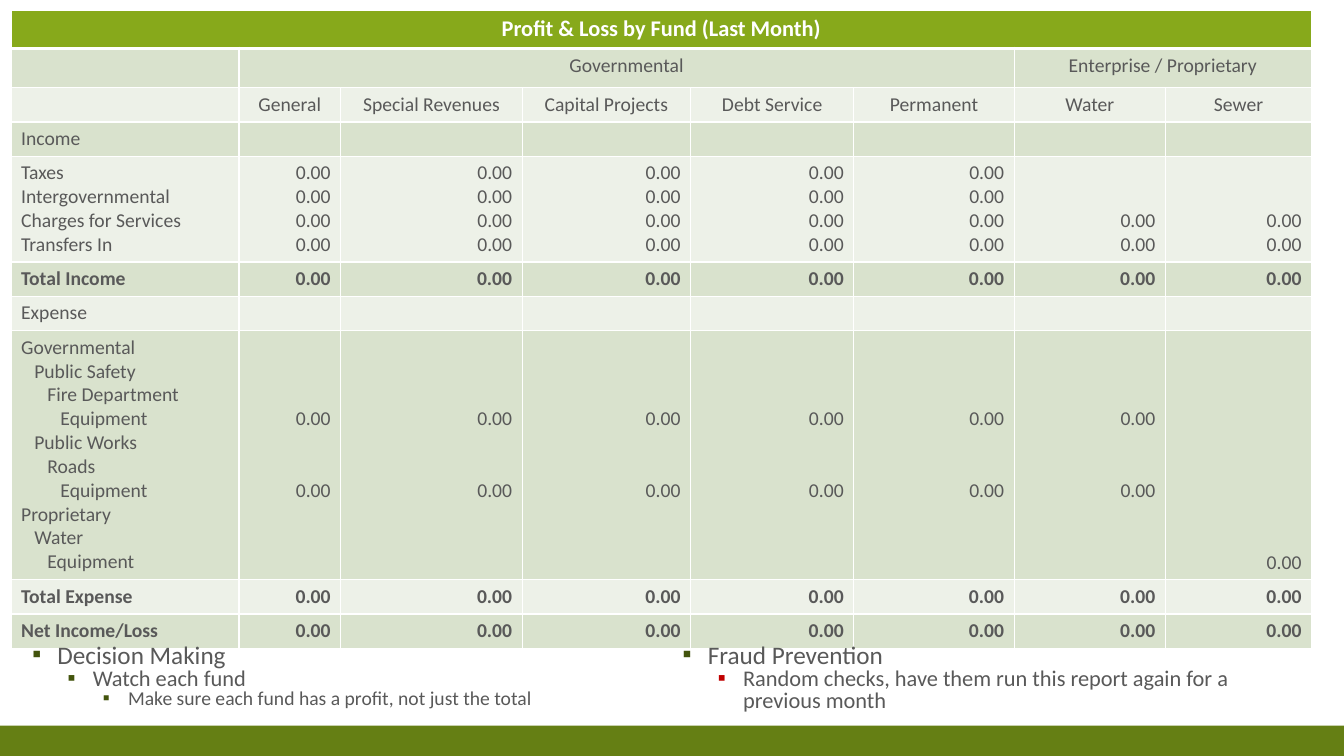
from lxml import etree
from pptx import Presentation
from pptx import util as u
from pptx.dml.color import RGBColor
from pptx.enum import shapes, text
from pptx.oxml.ns import qn

FONT = "Calibri"
GREY, WHITE, BAND, BULLET, ALERT = "595959", "FFFFFF", "657F14", "43540D", "C00000"
HEADER_FILL, ROW_FILLS = "87A91B", ("EDF1E8", "D9E2CD")
COLUMNS = [2.26, 1.01, 1.8, 1.67, 1.62, 1.59, 1.5, 1.45]
HEADER = "Profit & Loss by Fund (Last Month)"
GROUPS = [("Governmental", 1, 5), ("Enterprise / Proprietary", 6, 7)]
FUNDS = ["General", "Special Revenues", "Capital Projects", "Debt Service",
         "Permanent", "Water", "Sewer"]
TOP_HEIGHTS = [0.38, 0.39, 0.34]
AMOUNT = "0.00"
LINE = 17.09
STEP = 0.13

# (height, bold, [(label, level)], lines holding an amount for each fund)
ROWS = [
    (0.34, False, [("Income", 0)], [[]] * 7),
    (1.05, False,
     [("Taxes", 0), ("Intergovernmental", 0), ("Charges for Services", 0), ("Transfers In", 0)],
     [[0, 1, 2, 3]] * 5 + [[2, 3]] * 2),
    (0.34, True, [("Total Income", 0)], [[0]] * 7),
    (0.34, False, [("Expense", 0)], [[]] * 7),
    (2.46, False,
     [("Governmental", 0), ("Public Safety", 1), ("Fire Department", 2), ("Equipment", 3),
      ("Public Works", 1), ("Roads", 2), ("Equipment", 3),
      ("Proprietary", 0), ("Water", 1), ("Equipment", 2)],
     [[3, 6]] * 6 + [[9]]),
    (0.34, True, [("Total Expense", 0)], [[0]] * 7),
    (0.34, True, [("Net Income/Loss", 0)], [[0]] * 7),
]
NOTES = [
    (0.17, 6.5, [("Decision Making", BULLET), ("Watch each fund", BULLET),
                 ("Make sure each fund has a profit, not just the total", BULLET)]),
    (6.62, 6.45, [("Fraud Prevention", BULLET),
                  ("Random checks, have them run this report again for a previous month", ALERT)]),
]
NOTE_SIZES = [18, 16, 14]


def paint(fill, color):
    fill.solid()
    fill.fore_color.rgb = RGBColor.from_string(color)


def style(para, size, color=GREY, bold=False):
    for span in para.runs:
        span.font.name, span.font.size, span.font.bold = FONT, u.Pt(size), bold
        span.font.color.rgb = RGBColor.from_string(color)


def border(cell, row):
    props = cell._tc.get_or_add_tcPr()
    thick = {0: "lnB", 1: "lnT"}.get(row)
    for side in ("lnL", "lnR", "lnT", "lnB"):
        line = etree.SubElement(props, qn("a:" + side), w=str(u.Pt(3 if side == thick else 1)))
        solid = etree.SubElement(line, qn("a:solidFill"))
        etree.SubElement(solid, qn("a:srgbClr"), val=WHITE)


def write(cell, lines, align, size=14, color=GREY, bold=False):
    cell.text_frame.text = "\n".join(lines)
    for para in cell.text_frame.paragraphs:
        para.alignment = align
        style(para, size, color, bold)
    return cell.text_frame.paragraphs


def write_amounts(cell, positions, bold):
    paras = write(cell, [AMOUNT] * len(positions), text.PP_ALIGN.RIGHT, bold=bold)
    if positions:
        cell.margin_top = u.Inches(0.05) + u.Pt(LINE * positions[0])
    for para, before, here in zip(paras[1:], positions, positions[1:]):
        para.space_before = u.Pt(LINE * (here - before - 1))


def build_table(page):
    heights = TOP_HEIGHTS + [row[0] for row in ROWS]
    frame = page.shapes.add_table(len(heights), len(COLUMNS), u.Inches(0.11), u.Inches(0.1),
                                  u.Inches(sum(COLUMNS)), u.Inches(sum(heights)))
    table = frame.table
    table.first_row = table.horz_banding = False
    for column, width in zip(table.columns, COLUMNS):
        column.width = u.Inches(width)
    for number, height in enumerate(heights):
        table.rows[number].height = u.Inches(height)
        for cell in table.rows[number].cells:
            border(cell, number)
            paint(cell.fill, ROW_FILLS[number % 2] if number else HEADER_FILL)

    table.cell(0, 0).merge(table.cell(0, len(COLUMNS) - 1))
    write(table.cell(0, 0), [HEADER], text.PP_ALIGN.CENTER, 16, WHITE, True)
    for name, first, last in GROUPS:
        table.cell(1, first).merge(table.cell(1, last))
        write(table.cell(1, first), [name], text.PP_ALIGN.CENTER)
    for column, fund in enumerate(FUNDS, 1):
        write(table.cell(2, column), [fund], text.PP_ALIGN.CENTER)

    for number, (_, bold, labels, amounts) in enumerate(ROWS, len(TOP_HEIGHTS)):
        paras = write(table.cell(number, 0), [label for label, _ in labels],
                      text.PP_ALIGN.LEFT, bold=bold)
        for para, (_, level) in zip(paras, labels):
            para._p.get_or_add_pPr().set("marL", str(u.Inches(STEP * level)))
        for column, positions in enumerate(amounts, 1):
            write_amounts(table.cell(number, column), positions, bold)

    for cell in table.iter_cells():
        if not cell.text_frame.text:
            etree.SubElement(cell.text_frame.paragraphs[0]._p, qn("a:endParaRPr"), sz="1400")


def build_note(box, left, width, lines):
    box.left, box.top = u.Inches(left), u.Inches(6.35)
    box.width, box.height = u.Inches(width), u.Inches(0.81)
    frame = box.text_frame
    frame.text = "\n".join(line for line, _ in lines)
    frame.word_wrap = True
    frame.auto_size = text.MSO_AUTO_SIZE.NONE
    frame.vertical_anchor = text.MSO_ANCHOR.TOP
    frame.margin_right = u.Inches(0.3)
    for level, (para, (_, color)) in enumerate(zip(frame.paragraphs, lines)):
        para.level = level
        para.line_spacing = 0.8
        para.space_before = para.space_after = u.Pt(0)
        style(para, NOTE_SIZES[level])
        props = para._p.get_or_add_pPr()
        props.set("marL", str(u.Inches(0.3 + 0.35 * level)))
        props.set("indent", str(u.Inches(-0.25)))
        tint = etree.SubElement(props, qn("a:buClr"))
        etree.SubElement(tint, qn("a:srgbClr"), val=color)
        etree.SubElement(props, qn("a:buFont"), typeface=FONT)
        etree.SubElement(props, qn("a:buChar"), char="▪")


def main():
    deck = Presentation()
    deck.slide_width, deck.slide_height = u.Inches(13.33), u.Inches(7.5)
    page = deck.slides.add_slide(deck.slide_layouts.get_by_name("Two Content"))
    title, *boxes = page.placeholders
    title._element.getparent().remove(title._element)

    band = page.shapes.add_shape(shapes.MSO_SHAPE.RECTANGLE, 0, u.Inches(7.2),
                                 deck.slide_width, u.Inches(0.3))
    band.shadow.inherit = False
    paint(band.fill, BAND)
    band.line.fill.background()

    build_table(page)
    for box, note in zip(boxes, NOTES):
        build_note(box, *note)
        box._element.getparent().append(box._element)
    deck.save("out.pptx")


if __name__ == "__main__":
    main()
